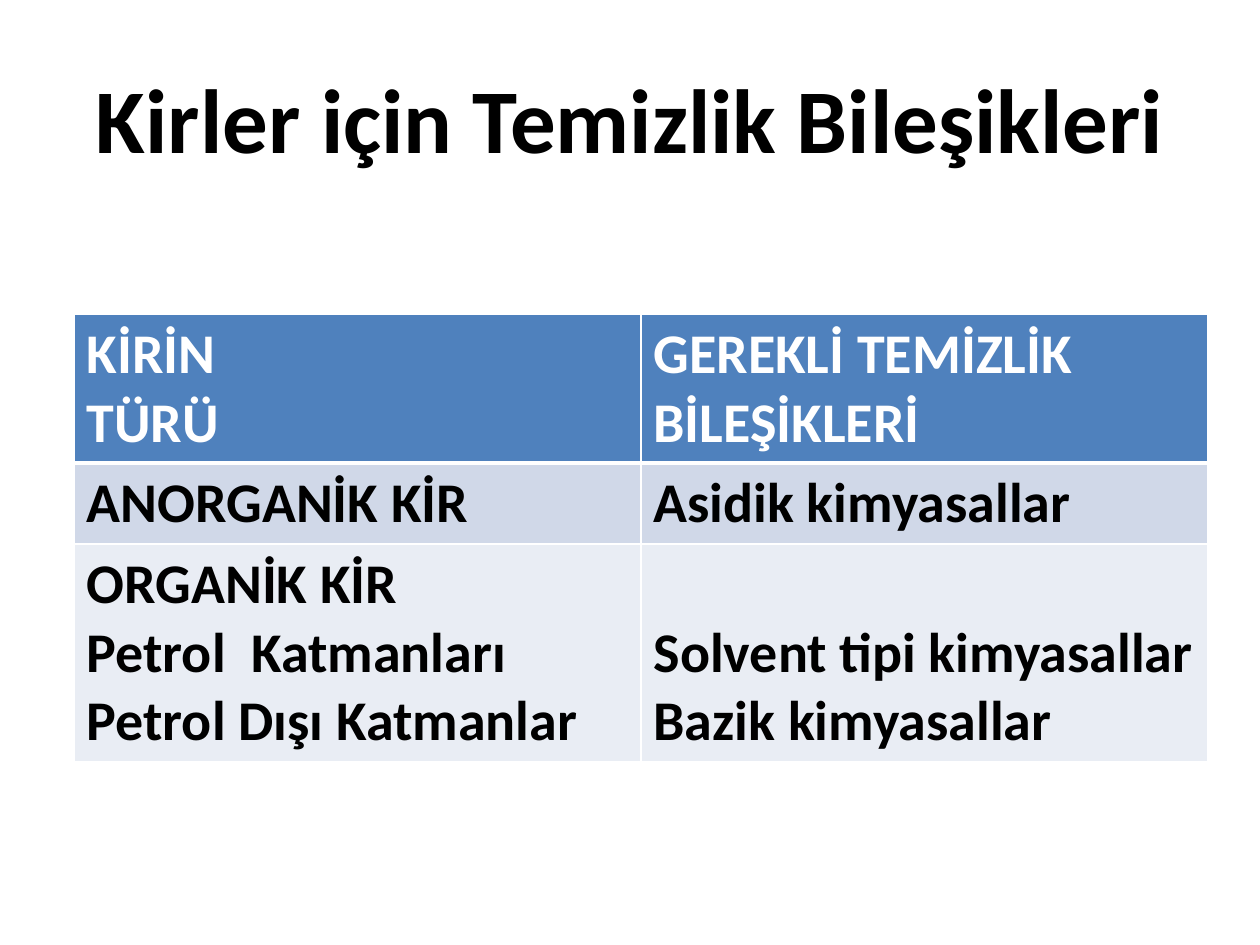
from lxml import etree
from pptx import Presentation
from pptx.dml.color import RGBColor
from pptx.enum.text import MSO_ANCHOR, PP_ALIGN
from pptx.oxml.ns import qn
from pptx.util import Pt

EMU_PER_PX = 914400 / 126
EMU_PER_PT = 12700
CENTER, LEFT = PP_ALIGN.CENTER, PP_ALIGN.LEFT
TOP, MIDDLE, BOTTOM = MSO_ANCHOR.TOP, MSO_ANCHOR.MIDDLE, MSO_ANCHOR.BOTTOM
FONT = "Calibri"
BLACK, WHITE = "000000", "FFFFFF"
HEADER_FILL = "4F81BD"
BAND_FILLS = ("D0D8E8", "E9EDF4")

TITLE = "Kirler için Temizlik Bileşikleri"
ROW_HEIGHTS = (149, 81, 218)
CLEANING_ROWS = (
    (("KİRİN", "TÜRÜ"), ("GEREKLİ TEMİZLİK BİLEŞİKLERİ",)),
    (("ANORGANİK KİR",), ("Asidik kimyasallar",)),
    (
        ("ORGANİK KİR", "Petrol  Katmanları", "Petrol Dışı Katmanlar"),
        ("Solvent tipi kimyasallar", "Bazik kimyasallar"),
    ),
)


def px(length):
    """Turn a length in px into EMU."""
    return round(length * EMU_PER_PX)


def color(hex_value):
    """Turn a hex string into a colour."""
    return RGBColor.from_string(hex_value)


def write_text(frame, lines, size=32, ink=BLACK, align=LEFT):
    """Write bold lines into a text frame, one paragraph each."""
    frame.word_wrap = True
    for index, line in enumerate(lines):
        paragraph = frame.add_paragraph() if index else frame.paragraphs[0]
        paragraph.alignment = align
        run = paragraph.add_run()
        run.text = line
        run.font.name = FONT
        run.font.size = Pt(size)
        run.font.bold = True
        run.font.color.rgb = color(ink)


def set_borders(cell, top=1, bottom=1):
    """Draw white borders round a cell, with widths in points."""
    properties = cell._tc.get_or_add_tcPr()
    for side, width in (("L", 1), ("R", 1), ("T", top), ("B", bottom)):
        line = etree.SubElement(
            properties, qn(f"a:ln{side}"), w=str(width * EMU_PER_PT)
        )
        fill = etree.SubElement(line, qn("a:solidFill"))
        etree.SubElement(fill, qn("a:srgbClr"), val=WHITE)


def add_title(slide, left, top, width, height):
    """Place the centred slide title in its box."""
    title = slide.shapes.add_textbox(px(left), px(top), px(width), px(height))
    title.text_frame.vertical_anchor = MIDDLE
    write_text(title.text_frame, [TITLE], size=52, align=CENTER)


def add_cleaning_table(slide, left, top, width):
    """Place the table of dirt types and their cleaning compounds."""
    columns = len(CLEANING_ROWS[0])
    table = slide.shapes.add_table(
        len(CLEANING_ROWS), columns,
        px(left), px(top), px(width), px(sum(ROW_HEIGHTS)),
    ).table
    for column in table.columns:
        column.width = px(width / columns)
    for row_index, row in enumerate(CLEANING_ROWS):
        table.rows[row_index].height = px(ROW_HEIGHTS[row_index])
        is_header = row_index == 0
        row_fill = HEADER_FILL if is_header else BAND_FILLS[(row_index - 1) % 2]
        most_lines = max(len(lines) for lines in row)
        for column_index, lines in enumerate(row):
            cell = table.cell(row_index, column_index)
            set_borders(
                cell,
                top=3 if row_index == 1 else 1,
                bottom=3 if is_header else 1,
            )
            cell.fill.solid()
            cell.fill.fore_color.rgb = color(row_fill)
            drops = not is_header and len(lines) < most_lines
            cell.vertical_anchor = BOTTOM if drops else TOP
            write_text(cell.text_frame, lines, ink=WHITE if is_header else BLACK)


def main():
    """Build and save the slide."""
    presentation = Presentation()
    presentation.slide_width = px(1260)
    presentation.slide_height = px(945)
    slide = presentation.slides.add_slide(presentation.slide_layouts[6])
    add_title(slide, 63, 38, 1134, 158)
    add_cleaning_table(slide, 74, 314, 1134)
    presentation.save("out.pptx")


if __name__ == "__main__":
    main()
